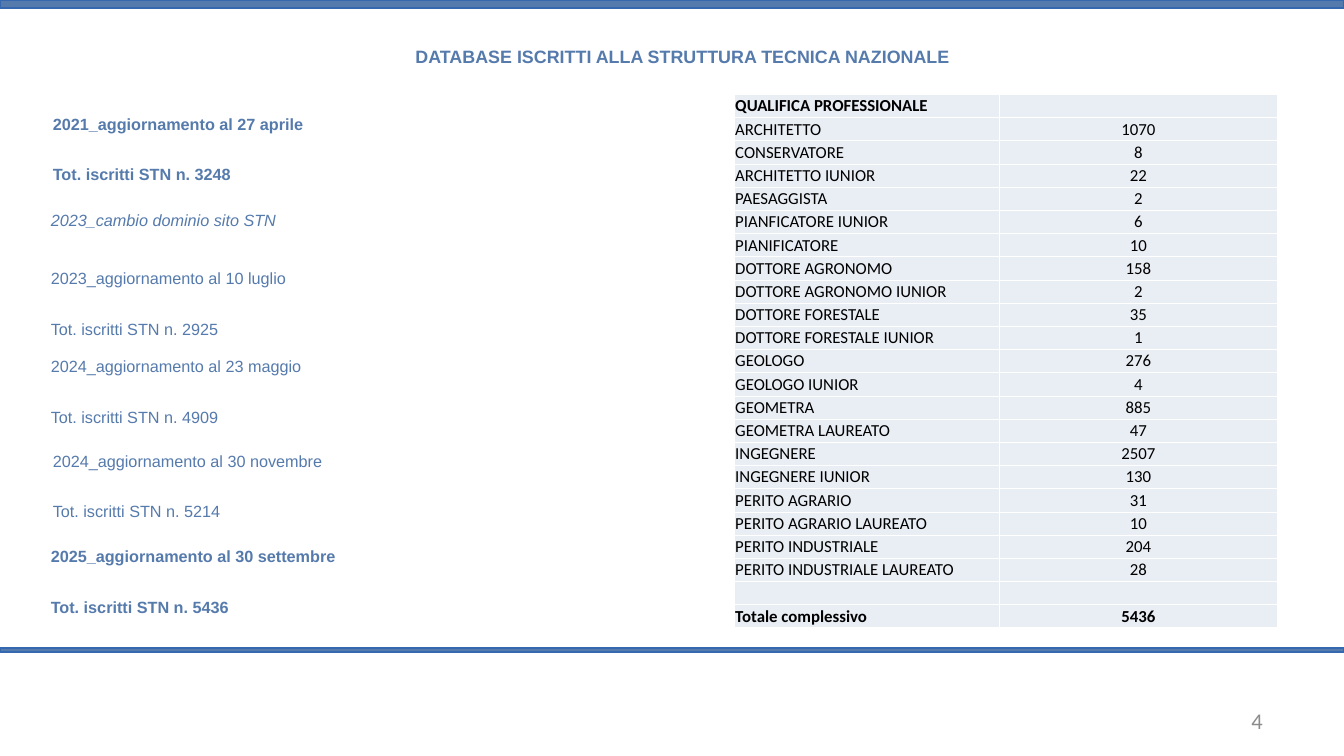
from lxml import etree
from pptx import Presentation
from pptx.dml.color import RGBColor
from pptx.enum.shapes import MSO_SHAPE
from pptx.enum.text import MSO_ANCHOR, MSO_AUTO_SIZE, PP_ALIGN
from pptx.oxml.ns import qn
from pptx.util import Inches, Pt

RECTANGLE = MSO_SHAPE.RECTANGLE
TOP, MIDDLE = MSO_ANCHOR.TOP, MSO_ANCHOR.MIDDLE
LEFT, CENTER, RIGHT = PP_ALIGN.LEFT, PP_ALIGN.CENTER, PP_ALIGN.RIGHT
GROW = MSO_AUTO_SIZE.SHAPE_TO_FIT_TEXT
TITLE_ONLY = 5

UPDATES = [
    (3.56, 12.07, 26.58, ["2021_aggiornamento al 27 aprile", "Tot. iscritti STN n. 3248"], {"bold": True}),
    (3.41, 24.87, 32.88, ["2023_cambio dominio sito STN"], {"italic": True}),
    (3.41, 32.53, 26.58, ["2023_aggiornamento al 10 luglio", "Tot. iscritti STN n. 2925"], {}),
    (3.41, 44.2, 26.58, ["2024_aggiornamento al 23 maggio", "Tot. iscritti STN n. 4909"], {}),
    (3.56, 56.67, 26.58, ["2024_aggiornamento al 30 novembre", "Tot. iscritti STN n. 5214"], {}),
    (3.41, 69.33, 26.58, ["2025_aggiornamento al 30 settembre", "Tot. iscritti STN n. 5436"], {"bold": True}),
]

QUALIFICATIONS = [
    ("QUALIFICA PROFESSIONALE", ""),
    ("ARCHITETTO", "1070"),
    ("CONSERVATORE", "8"),
    ("ARCHITETTO IUNIOR", "22"),
    ("PAESAGGISTA", "2"),
    ("PIANFICATORE IUNIOR", "6"),
    ("PIANIFICATORE", "10"),
    ("DOTTORE AGRONOMO", "158"),
    ("DOTTORE AGRONOMO IUNIOR", "2"),
    ("DOTTORE FORESTALE", "35"),
    ("DOTTORE FORESTALE IUNIOR", "1"),
    ("GEOLOGO", "276"),
    ("GEOLOGO IUNIOR", "4"),
    ("GEOMETRA", "885"),
    ("GEOMETRA LAUREATO", "47"),
    ("INGEGNERE", "2507"),
    ("INGEGNERE IUNIOR", "130"),
    ("PERITO AGRARIO", "31"),
    ("PERITO AGRARIO LAUREATO", "10"),
    ("PERITO INDUSTRIALE", "204"),
    ("PERITO INDUSTRIALE LAUREATO", "28"),
    ("", ""),
    ("Totale complessivo", "5436"),
]


def color(code):
    return RGBColor.from_string(code)


def write(frame, lines, size, ink, face="Arial", bold=False, italic=False,
          align=LEFT, spacing=None, raised=False):
    for index, line in enumerate(lines):
        para = frame.add_paragraph() if index else frame.paragraphs[0]
        para.alignment = align
        para.line_spacing = spacing
        span = para.add_run()
        span.text = line
        font = span.font
        font.name, font.size = face, Pt(size)
        font.bold, font.italic = bold, italic
        font.color.rgb = color(ink)
        if raised:
            span._r.get_or_add_rPr().set("baseline", "30000")


def set_margins(target, left, top, right, bottom):
    target.margin_left, target.margin_top = Inches(left), Inches(top)
    target.margin_right, target.margin_bottom = Inches(right), Inches(bottom)


def add_borders(cell, ink, width):
    properties = cell._tc.get_or_add_tcPr()
    for side in ("lnL", "lnR", "lnT", "lnB"):
        line = etree.SubElement(properties, qn(f"a:{side}"), w=str(Pt(width)))
        fill = etree.SubElement(line, qn("a:solidFill"))
        etree.SubElement(fill, qn("a:srgbClr"), val=ink)


class SlideBuilder:
    blue, edge, grey, black = "557AAC", "3668AF", "8C8C8C", "000000"
    cell_fill, cell_border = "E9EDF4", "FFFFFF"

    def __init__(self, deck):
        self.width, self.height = deck.slide_width, deck.slide_height
        self.page = deck.slides.add_slide(deck.slide_layouts[TITLE_ONLY])

    def across(self, percent):
        return round(self.width * percent / 100)

    def down(self, percent):
        return round(self.height * percent / 100)

    def area(self, left, top, width, height):
        return self.across(left), self.down(top), self.across(width), self.down(height)

    def bar(self, top, height):
        bar = self.page.shapes.add_shape(RECTANGLE, *self.area(0, top, 100, height))
        bar.shadow.inherit = False
        bar.fill.solid()
        bar.fill.fore_color.rgb = color(self.blue)
        bar.line.color.rgb = color(self.edge)
        bar.line.width = Pt(2)

    def title(self, text, *place):
        box = self.page.shapes.title
        box.left, box.top, box.width, box.height = self.area(*place)
        self.raised_text(box.text_frame, [text], 44, bold=True, align=CENTER)

    def update(self, left, top, width, lines, **style):
        box = self.page.shapes.add_textbox(*self.area(left, top, width, 4.53 * len(lines)))
        self.raised_text(box.text_frame, lines, 40, **style)

    def raised_text(self, frame, lines, size, **style):
        frame.word_wrap = True
        frame.auto_size = GROW
        frame.vertical_anchor = TOP
        write(frame, lines, size, self.blue, spacing=1.5, raised=True, **style)

    def page_number(self, text, *place):
        frame = self.page.shapes.add_textbox(*self.area(*place)).text_frame
        frame.word_wrap = True
        frame.vertical_anchor = MIDDLE
        set_margins(frame, 0.27, 0.13, 0.27, 0.13)
        write(frame, [text], 32, self.grey, face="Calibri", align=RIGHT)

    def table(self, rows, left, top, columns, row_height):
        place = self.area(left, top, sum(columns), row_height * len(rows))
        table = self.page.shapes.add_table(len(rows), len(columns), *place).table
        table.first_row = table.horz_banding = False
        for column, width in zip(table.columns, columns):
            column.width = self.across(width)
        for number, values in enumerate(rows):
            table.rows[number].height = self.down(row_height)
            bold = number in (0, len(rows) - 1)
            for cell, text, align in zip(table.rows[number].cells, values, (LEFT, CENTER)):
                self.cell(cell, text, bold, align)

    def cell(self, cell, text, bold, align):
        add_borders(cell, self.cell_border, 1)
        cell.fill.solid()
        cell.fill.fore_color.rgb = color(self.cell_fill)
        cell.vertical_anchor = MIDDLE
        set_margins(cell, 0.01, 0.01, 0.01, 0)
        if text:
            write(cell.text_frame, [text], 24, self.black, face="Calibri", bold=bold, align=align)


def main():
    deck = Presentation()
    deck.slide_width, deck.slide_height = Inches(26.67), Inches(15)
    slide = SlideBuilder(deck)
    slide.bar(85.73, 0.53)
    slide.bar(0, 1.07)
    slide.title("DATABASE ISCRITTI ALLA STRUTTURA TECNICA NAZIONALE", 5.02, 2.8, 91.53, 5)
    for left, top, width, lines, style in UPDATES:
        slide.update(left, top, width, lines, **style)
    slide.page_number("4", 71.65, 92.67, 23.32, 5.33)
    slide.table(QUALIFICATIONS, 54.67, 12.47, (19.72, 20.62), 3.07)
    deck.save("out.pptx")


if __name__ == "__main__":
    main()
